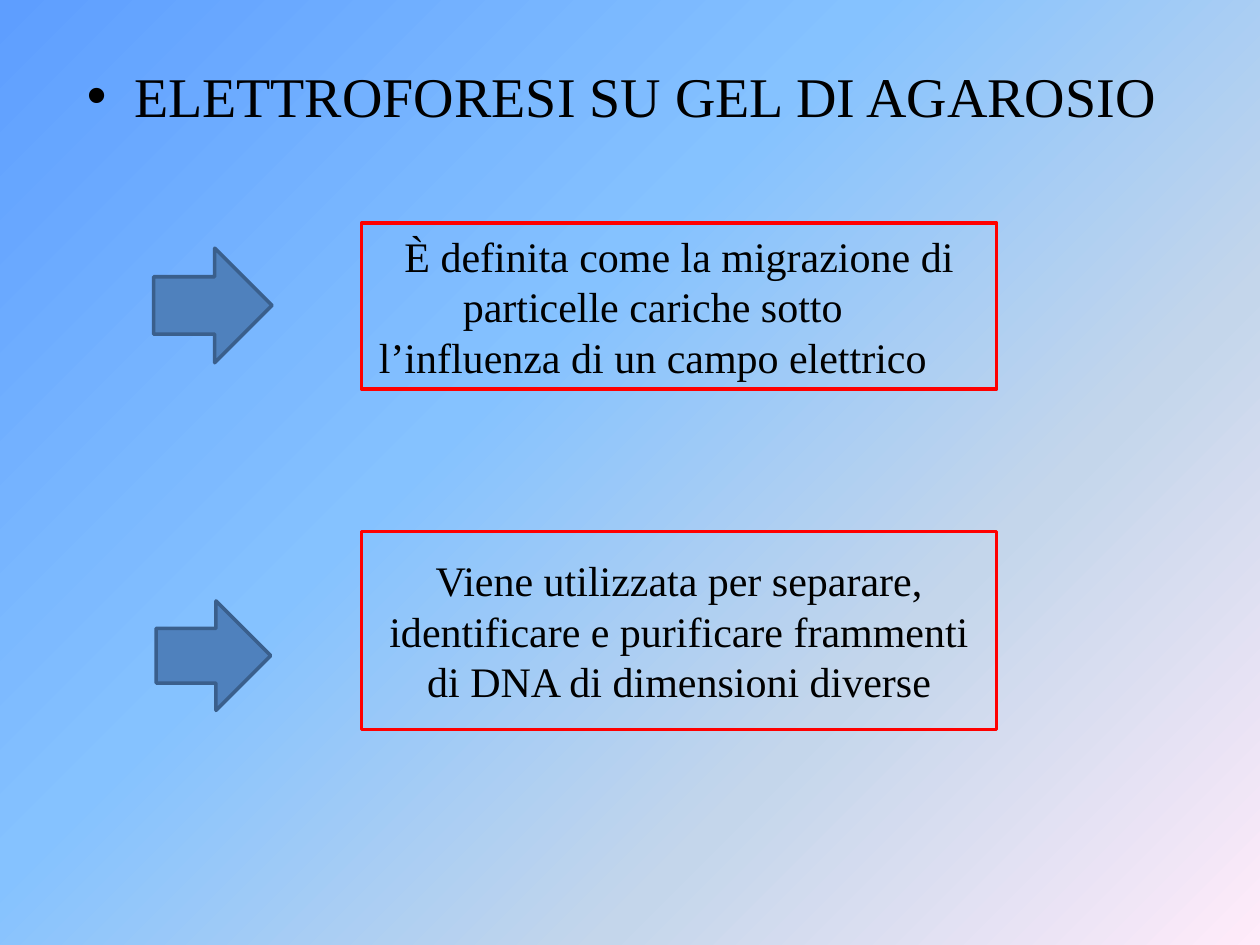
from lxml.etree import SubElement
from pptx import Presentation
from pptx.dml.color import RGBColor
from pptx.enum.shapes import MSO_SHAPE
from pptx.enum.text import MSO_ANCHOR, PP_ALIGN
from pptx.oxml import parse_xml
from pptx.oxml.ns import qn
from pptx.util import Pt

FONT = "Times New Roman"
STOPS = [(0, "5E9EFF"), (40, "85C2FF"), (70, "C4D6EB"), (100, "FFEBFA")]


def color(code):
    return RGBColor.from_string(code)


def write(shape, lines, size=24, align=PP_ALIGN.CENTER,
          anchor=MSO_ANCHOR.MIDDLE, before=0):
    """Write one paragraph per line and return the paragraphs."""
    frame = shape.text_frame
    frame.word_wrap = True
    frame.vertical_anchor = anchor
    frame.text = "\n".join(lines)
    for para in frame.paragraphs:
        para.alignment = align
        para.space_before = Pt(before)
        font = para.font
        for run in para.runs:
            font = run.font
            font.name, font.size = FONT, Pt(size)
            font.color.rgb = color("000000")
    return frame.paragraphs


def draw(slide, kind, box, line, fill=None):
    shape = slide.shapes.add_shape(kind, *map(Pt, box))
    shape.shadow.inherit = False
    shape.line.color.rgb = color(line)
    shape.line.width = Pt(2)
    if fill:
        shape.fill.solid()
        shape.fill.fore_color.rgb = color(fill)
    else:
        shape.fill.background()
    return shape


def paint(slide):
    """Diagonal four-colour gradient behind the slide."""
    fill = slide.background.fill
    fill.gradient()
    grad = slide.background._cSld.find(".//" + qn("a:gradFill"))
    stops = "".join(
        f'<a:gs pos="{pos * 1000}"><a:srgbClr val="{code}"/></a:gs>'
        for pos, code in STOPS)
    new = parse_xml(
        '<a:gradFill xmlns:a="http://schemas.openxmlformats.org/drawingml/2006/main"'
        f' rotWithShape="1"><a:gsLst>{stops}</a:gsLst>'
        '<a:lin ang="2700000" scaled="0"/></a:gradFill>')
    grad.getparent().replace(grad, new)


def heading(slide, box, text):
    """Bulleted title line."""
    shape = slide.shapes.add_textbox(*map(Pt, box))
    para = write(shape, [text], size=32, align=PP_ALIGN.LEFT,
                 anchor=MSO_ANCHOR.TOP, before=4)[0]
    props = para._p.get_or_add_pPr()
    props.set("marL", str(Pt(27)))
    props.set("indent", str(-Pt(27)))
    SubElement(props, qn("a:buFont"), typeface="Arial")
    SubElement(props, qn("a:buChar"), char="•")


def point(slide, box, arrow, lines):
    """Red-framed statement; arrow is placed relative to the box."""
    left, top, _, _ = box
    dx, dy, wide, high = arrow
    draw(slide, MSO_SHAPE.RIGHT_ARROW, (left + dx, top + dy, wide, high),
         "3A5F8C", "4F81BD")
    return write(draw(slide, MSO_SHAPE.RECTANGLE, box, "FF0000"), lines)


def main():
    deck = Presentation()
    deck.slide_width, deck.slide_height = Pt(720), Pt(540)
    slide = deck.slides.add_slide(deck.slide_layouts[6])
    paint(slide)
    heading(slide, (42.5, 31.7, 647.3, 450.7), "ELETTROFORESI SU GEL DI AGAROSIO")

    # Definition, with its middle line pulled to the left
    paras = point(slide, (206.6, 127.4, 363, 95), (-118.8, 14.4, 67.7, 65.5),
                  ["È definita come la migrazione di",
                   "particelle cariche sotto",
                   "l’influenza di un campo elettrico"])
    paras[1]._p.get_or_add_pPr().set("marR", str(Pt(30)))

    # Purpose
    point(slide, (206.6, 303.8, 363, 113), (-117.4, 39.6, 65.5, 62.6),
          ["Viene utilizzata per separare, identificare e purificare "
           "frammenti di DNA di dimensioni diverse"])
    deck.save("out.pptx")


if __name__ == "__main__":
    main()
